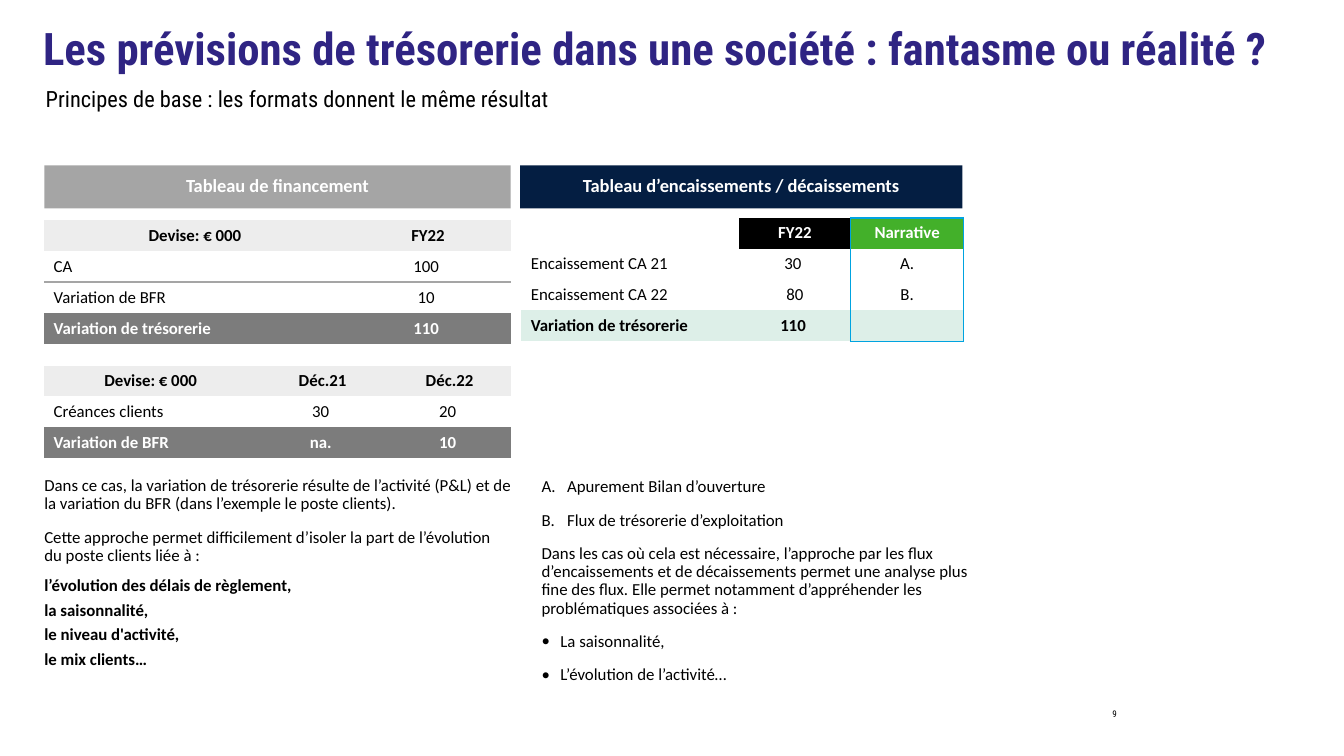
from dataclasses import dataclass

from lxml import etree
from pptx import Presentation
from pptx.dml.color import RGBColor
from pptx.enum.shapes import MSO_SHAPE
from pptx.enum.text import MSO_ANCHOR, PP_ALIGN
from pptx.oxml.ns import qn
from pptx.util import Inches, Pt

RECT = MSO_SHAPE.RECTANGLE
MID = MSO_ANCHOR.MIDDLE
LEFT, MIDDLE, RIGHT = PP_ALIGN.LEFT, PP_ALIGN.CENTER, PP_ALIGN.RIGHT
PLAIN = "{2D5ABB26-0587-4C30-8999-92F81FD0307C}"  # no style, no grid


@dataclass(frozen=True)
class Theme:
    head: str = "Roboto Condensed"
    body: str = "Calibri"
    black: str = "000000"
    white: str = "FFFFFF"
    violet: str = "2F2483"
    navy: str = "041E42"
    gray: str = "A5A5A5"
    dark: str = "7C7C7C"
    pale: str = "EDEDED"
    green: str = "43B02A"
    mint: str = "DDEFE8"
    cyan: str = "00A3E0"
    title: float = 24
    sub: float = 12
    band: float = 9.9
    text: float = 9
    page: float = 4.9


T = Theme()

# Content
TITLE = "Les prévisions de trésorerie dans une société : fantasme ou réalité ?"
SUB = "Principes de base : les formats donnent le même résultat"
PAGE = "9"
BANDS = [("Tableau de financement", T.gray),
         ("Tableau d’encaissements / décaissements", T.navy)]
FUNDS = [("Devise: € 000", "FY22"),
         ("CA", "100 "),
         ("Variation de BFR", "10 "),
         ("Variation de trésorerie", "110 ")]
NEEDS = [("Devise: € 000", "Déc.21", "Déc.22"),
         ("Créances clients", "30 ", "20 "),
         ("Variation de BFR", "na. ", "10 ")]
FLOWS = [("", "FY22", "Narrative"),
         ("Encaissement CA 21", "30 ", "A."),
         ("Encaissement CA 22", "80", "B."),
         ("Variation de trésorerie", "110 ", "")]
# Notes: text, kind, space after
LNOTES = [
    ("Dans ce cas, la variation de trésorerie résulte de l’activité (P&L) et de "
     "la variation du BFR (dans l’exemple le poste clients).", "plain", 8.1),
    ("Cette approche permet difficilement d’isoler la part de l’évolution "
     "du poste clients liée à :", "plain", 5),
    ("l’évolution des délais de règlement,", "bold", 2.5),
    ("la saisonnalité,", "bold", 2.5),
    ("le niveau d'activité,", "bold", 2.5),
    ("le mix clients…", "bold", 2.5)]
RNOTES = [
    ("Apurement Bilan d’ouverture", "letter", 8.1),
    ("Flux de trésorerie d’exploitation", "letter", 8.1),
    ("Dans les cas où cela est nécessaire, l’approche par les flux "
     "d’encaissements et de décaissements permet une analyse plus fine des flux. "
     "Elle permet notamment d’appréhender les problématiques associées à :",
     "plain", 8.1),
    ("La saisonnalité,", "dot", 8.1),
    ("L’évolution de l’activité…", "dot", 8.1)]
MARKS = {"letter": (0.19, "buAutoNum", {"type": "alphaUcPeriod"}),
         "dot": (0.14, "buChar", {"char": "•"})}

# Grid, in inches
WIDE = 10
HIGH = WIDE * 9 / 16
COLS = [(0.33, 3.47), (3.87, 3.29)]
BAND = (1.23, 0.32)
ROW = 0.23
HEAD = (9.18, 0.27)


def color(code):
    return RGBColor.from_string(code)


def put(para, text, size, tint=T.black, bold=False, face=T.body):
    run = para.add_run()
    run.text = text
    font = run.font
    font.size, font.bold, font.name = Pt(size), bold, face
    font.color.rgb = color(tint)


def frame(slide, x, y, w, h):
    """Add a wrapping text box without margins and return its text frame."""
    box = slide.shapes.add_textbox(Inches(x), Inches(y), Inches(w), Inches(h))
    text = box.text_frame
    text.word_wrap = True
    text.margin_left = text.margin_right = 0
    text.margin_top = text.margin_bottom = 0
    return text


def line(slide, spot, text, size, tint, bold=False, lead=None, align=LEFT):
    para = frame(slide, *spot).paragraphs[0]
    para.alignment = align
    if lead:
        para.line_spacing = Pt(lead)
    put(para, text, size, tint, bold, T.head)


def band(slide, col, text, tint):
    (x, w), (y, h) = col, BAND
    box = slide.shapes.add_shape(RECT, Inches(x), Inches(y), Inches(w), Inches(h))
    box.shadow.inherit = False
    box.fill.solid()
    box.fill.fore_color.rgb = color(tint)
    box.line.fill.background()
    box.text_frame.vertical_anchor = MID
    para = box.text_frame.paragraphs[0]
    para.alignment, para.line_spacing = MIDDLE, 0.9
    put(para, text, T.band, T.white, True)


def edge(cell, sides, tint):
    """Draw one-point borders; sides come in the order L, R, T, B."""
    props = cell._tc.get_or_add_tcPr()
    for spot, side in enumerate(sides):
        rule = etree.Element(qn(f"a:ln{side}"), w=str(Pt(1)))
        fill = etree.SubElement(rule, qn("a:solidFill"))
        etree.SubElement(fill, qn("a:srgbClr"), val=tint)
        props.insert(spot, rule)


def grid(slide, x, y, widths, rows, look):
    """Add a table; look(row, col) gives fill, text colour and boldness."""
    obj = slide.shapes.add_table(len(rows), len(widths), Inches(x), Inches(y),
                                 Inches(sum(widths)), Inches(ROW * len(rows)))
    table = obj.table
    table.first_row = table.horz_banding = False
    table._tbl.tblPr.find(qn("a:tableStyleId")).text = PLAIN
    for col, width in zip(table.columns, widths):
        col.width = Inches(width)
    for r, row in enumerate(rows):
        table.rows[r].height = Inches(ROW)
        for c, text in enumerate(row):
            cell = table.cell(r, c)
            cell.margin_left = cell.margin_right = Inches(0.07)
            cell.margin_top = cell.margin_bottom = 0
            cell.vertical_anchor = MID
            fill, tint, bold = look(r, c)
            if fill:
                cell.fill.solid()
                cell.fill.fore_color.rgb = color(fill)
            else:
                cell.fill.background()
            para = cell.text_frame.paragraphs[0]
            para.alignment = MIDDLE if c or not r else LEFT
            if text:
                put(para, text, T.text, tint, bold)
            else:
                etree.SubElement(para._p, qn("a:endParaRPr"), sz=str(T.text * 100))
    return table


def gray(last):
    def look(r, c):
        if r == last:
            return T.dark, T.white, True
        return (None, T.black, False) if r else (T.pale, T.black, True)
    return look


def flow(r, c):
    if r == 0:
        return (None, T.black, T.green)[c], T.white, True
    last = r == len(FLOWS) - 1
    return T.mint if last else None, T.black, last


def notes(slide, spot, items):
    text = frame(slide, *spot)
    for i, (words, kind, after) in enumerate(items):
        para = text.paragraphs[0] if i == 0 else text.add_paragraph()
        para.space_after = Pt(after)
        if kind != "bold":
            para.line_spacing = 0.9
        if kind in MARKS:
            dent, tag, attrs = MARKS[kind]
            props = para._p.get_or_add_pPr()
            props.set("marL", str(Inches(dent)))
            props.set("indent", str(-Inches(dent)))
            etree.SubElement(props, qn("a:buFont"), typeface=T.body)
            etree.SubElement(props, qn(f"a:{tag}"), attrs)
        put(para, words, T.text, bold=kind == "bold")


def main():
    deck = Presentation()
    deck.slide_width, deck.slide_height = Inches(WIDE), Inches(HIGH)
    slide = deck.slides.add_slide(deck.slide_layouts[6])

    line(slide, (0.34, 0.64, *HEAD), SUB, T.sub, T.black, lead=14)
    line(slide, (0.32, 0.25, *HEAD), TITLE, T.title, T.violet, True, lead=22)
    line(slide, (8.06, 5.27, 0.25, 0.08), PAGE, T.page, T.black, align=RIGHT)
    for col, (text, tint) in zip(COLS, BANDS):
        band(slide, col, text, tint)

    x = COLS[0][0]
    funds = grid(slide, x, 1.64, [2.24, 1.23], FUNDS, gray(3))
    for c in range(2):
        edge(funds.cell(1, c), "B", T.gray)
    grid(slide, x, 2.72, [1.58, 0.98, 0.91], NEEDS, gray(2))
    flows = grid(slide, 3.88, 1.62, [1.62, 0.83, 0.84], FLOWS, flow)
    for r, sides in enumerate(["LRT", "LR", "LR", "LRB"]):
        edge(flows.cell(r, 1), "R", T.cyan)
        edge(flows.cell(r, 2), sides, T.cyan)

    notes(slide, (x, 3.55, 3.47, 1.42), LNOTES)
    notes(slide, (4.03, 3.56, 3.37, 1.54), RNOTES)
    deck.save("out.pptx")


if __name__ == "__main__":
    main()
